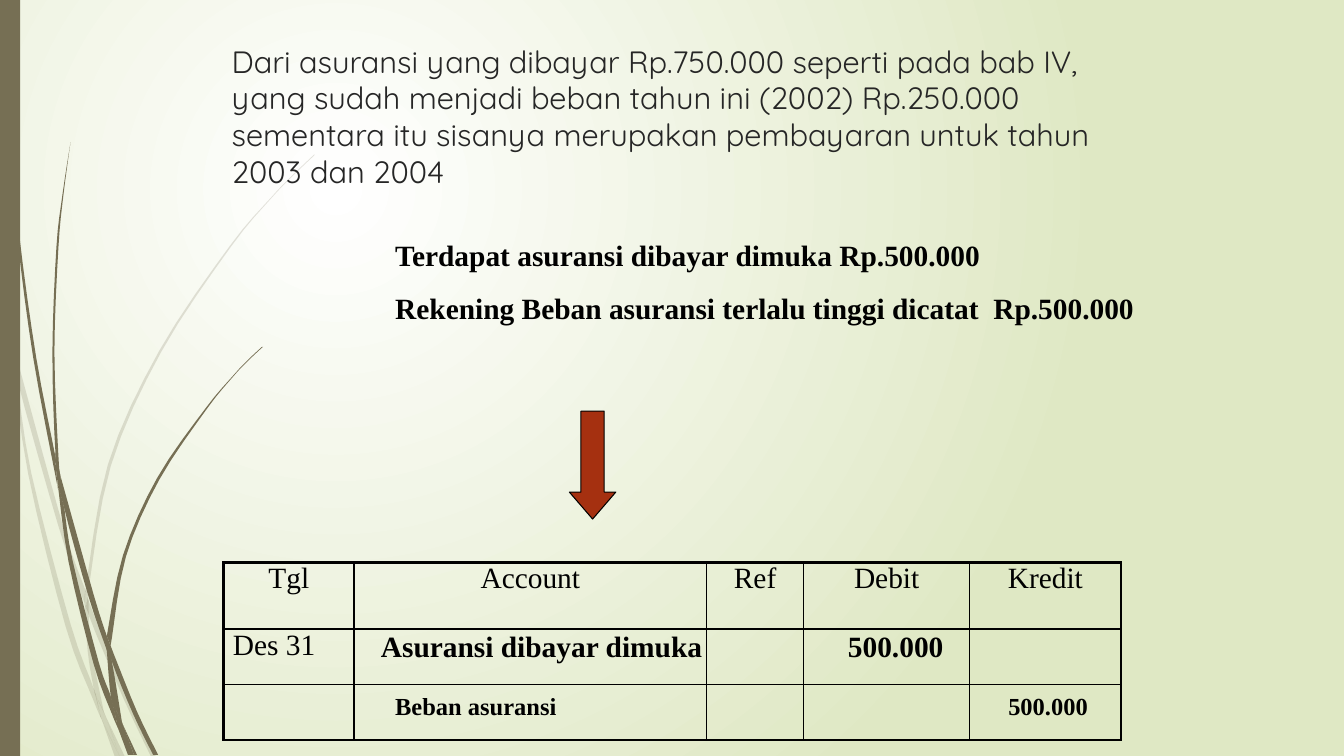
from lxml import etree
from pptx import Presentation
from pptx.dml.color import RGBColor
from pptx.enum.shapes import MSO_SHAPE as Preset
from pptx.enum.text import PP_ALIGN as Align
from pptx.oxml import parse_xml
from pptx.oxml.ns import nsdecls, qn
from pptx.util import Cm, Pt

COLORS = {
    "olive": "766F54",
    "white": "FFFFFF",
    "pale_green": "DFE8C4",
    "title": "262626",
    "black": "000000",
    "red": "A53010",
}
SERIF = "Times New Roman"
GRID = 2.54  # grass points are laid out on a grid of 2.54 cm


def smooth_edge(edge):
    """Run a smooth curve through the points of one edge of a blade."""
    padded = [edge[0], *edge, edge[-1]]
    points = []
    for a, b, c, d in zip(padded, padded[1:], padded[2:], padded[3:]):
        for t in (0, 0.25, 0.5, 0.75):
            points.append([
                Cm(GRID * (2 * q + (r - p) * t + (2 * p - 5 * q + 4 * r - s) * t ** 2
                           + (3 * q - p - 3 * r + s) * t ** 3) / 2)
                for p, q, r, s in zip(a, b, c, d)
            ])
    return points + [[Cm(GRID * value) for value in edge[-1]]]


def add_text(left, top, width, height, text, font_name, size, color, bold=False):
    box = slide.shapes.add_textbox(Cm(left), Cm(top), Cm(width), Cm(height))
    box.text_frame.word_wrap = True
    paragraph = box.text_frame.paragraphs[0]
    paragraph.text = text
    paragraph.font.name = font_name
    paragraph.font.size = Pt(size)
    paragraph.font.bold = bold
    paragraph.font.color.rgb = RGBColor.from_string(COLORS[color])
    return paragraph


presentation = Presentation()
presentation.slide_width, presentation.slide_height = Cm(33.87), Cm(19.05)
slide = presentation.slides.add_slide(presentation.slide_layouts[6])

# Background: a circular glow in the upper left
slide.background.fill.solid()
background = slide.element.find(".//" + qn("p:bgPr"))
background.replace(background[0], parse_xml(
    f'<a:gradFill {nsdecls("a")} rotWithShape="1"><a:gsLst>'
    f'<a:gs pos="0"><a:srgbClr val="{COLORS["white"]}"/></a:gs>'
    f'<a:gs pos="100000"><a:srgbClr val="{COLORS["pale_green"]}"/></a:gs></a:gsLst>'
    '<a:path path="circle"><a:fillToRect l="50000" t="50000" r="100000" b="100000"/>'
    '</a:path></a:gradFill>'))

# Grass: each piece is an edge down one side and an edge back up the other
faint_pieces = [
    ([(0.11, 3.5), (0.09, 3.22), (0, 2.82)], [(0, 2.99), (0.1, 3.44)]),
    ([(0.14, 3.45), (0.17, 3.76), (0.58, 5.22), (0.84, 5.99)],
     [(0.85, 5.86), (0.62, 5.2), (0.14, 3.45)]),
    ([(0.88, 5.96), (0.88, 6.1), (1.23, 6.94), (1.5, 7.51)],
     [(1.55, 7.51), (1.27, 6.92), (0.92, 6.07)]),
    ([(1.05, 7.11), (1.19, 7.51)], [(1.24, 7.51), (1.05, 7.11)]),
    ([(0.11, 3.5), (0.28, 4.7), (0.65, 6.21), (0.92, 6.93), (1.01, 7.14)],
     [(0.99, 7.07), (0.93, 6.83), (0.7, 6.19), (0.31, 4.69), (0.17, 3.76)]),
    ([(0.84, 5.99), (0.87, 6.46), (0.93, 6.83), (0.96, 6.92), (1.05, 7.11)],
     [(1.03, 7.06), (0.91, 6.46), (0.88, 6.1), (0.88, 6.08)]),
    ([(3.12, 1.53), (2.89, 1.75), (2.68, 1.97), (2.28, 2.44), (1.58, 3.48),
      (1.07, 4.61), (0.85, 5.84), (0.85, 5.86)],
     [(0.88, 5.96), (0.88, 5.84), (1.1, 4.62), (1.6, 3.49), (2.29, 2.45),
      (2.68, 1.98), (2.9, 1.75), (3.12, 1.54)]),
    ([(1.01, 7.14), (1.14, 7.51)], [(1.19, 7.51), (1.01, 7.14)]),
    ([(0.85, 5.86), (0.84, 5.99), (0.88, 6.08)], [(0.88, 6.1), (0.88, 5.96)]),
    ([(0.93, 6.83), (0.99, 7.07), (1.01, 7.14), (1.19, 7.51)],
     [(1.19, 7.51), (1.05, 7.11), (0.96, 6.92)]),
]
solid_pieces = [
    ([(0.03, 0), (0.04, 0.48), (0.07, 1.1), (0.17, 2.33), (0.33, 3.55),
      (0.56, 4.77), (0.57, 4.81)],
     [(0.55, 4.57), (0.55, 4.53), (0.36, 3.55), (0.19, 2.32), (0.08, 1.09),
      (0.05, 0.48), (0.04, 0)]),
    ([(0.6, 4.72), (0.64, 5.05), (0.88, 5.92), (1.06, 6.45)],
     [(1.06, 6.31), (0.93, 5.9), (0.6, 4.72)]),
    ([(1.1, 6.41), (1.11, 6.56), (1.32, 7.08), (1.52, 7.49)],
     [(1.57, 7.49), (1.36, 7.06), (1.13, 6.49)]),
    ([(0.57, 4.77), (0.68, 5.57), (0.93, 6.59), (1.11, 7.08), (1.17, 7.22)],
     [(1.16, 7.17), (1.1, 6.91), (0.98, 6.57), (0.72, 5.56), (0.64, 5.05)]),
    ([(0.7, 1.41), (0.62, 1.93), (0.56, 2.45), (0.52, 3.49), (0.55, 4.49), (0.6, 4.72)],
     [(0.6, 4.72), (0.58, 4.53), (0.54, 3.49), (0.58, 2.45), (0.63, 1.93), (0.7, 1.41)]),
    ([(1.22, 7.19), (1.33, 7.49)], [(1.36, 7.49), (1.22, 7.19)]),
    ([(0.55, 4.49), (0.55, 4.53), (0.57, 4.77), (0.64, 5.05)], [(0.6, 4.72), (0.55, 4.49)]),
    ([(2.6, 3.44), (2.45, 3.58), (2.31, 3.73), (2.04, 4.05), (1.56, 4.74),
      (1.22, 5.51), (1.06, 6.31)],
     [(1.1, 6.41), (1.11, 6.33), (1.25, 5.52), (1.58, 4.76), (2.05, 4.06),
      (2.31, 3.74), (2.45, 3.59), (2.61, 3.44)]),
    ([(1.17, 7.22), (1.27, 7.49)], [(1.31, 7.49), (1.17, 7.22)]),
    ([(1.06, 6.45), (1.1, 6.91), (1.16, 7.06), (1.22, 7.19)],
     [(1.21, 7.16), (1.11, 6.56), (1.06, 6.45)]),
    ([(1.06, 6.31), (1.06, 6.45), (1.11, 6.56)], [(1.1, 6.41), (1.06, 6.31)]),
    ([(1.1, 6.91), (1.16, 7.17), (1.17, 7.22), (1.3, 7.49)],
     [(1.33, 7.49), (1.22, 7.19), (1.16, 7.06)]),
]
for pieces, opacity in ((faint_pieces, 20), (solid_pieces, 100)):
    for down, back in pieces:
        outline = smooth_edge(down) + smooth_edge(back)
        builder = slide.shapes.build_freeform(*outline[0])
        builder.add_line_segments(outline[1:], close=True)
        blade = builder.convert_to_shape()
        blade.shadow.inherit = False
        blade.fill.solid()
        blade.fill.fore_color.rgb = RGBColor.from_string(COLORS["olive"])
        blade.line.fill.background()
        if opacity < 100:
            color = blade.element.spPr.find(".//" + qn("a:srgbClr"))
            etree.SubElement(color, qn("a:alpha"), val=str(opacity * 1000))

# Side bar
bar = slide.shapes.add_shape(Preset.RECTANGLE, 0, 0, Cm(0.51), Cm(19.05))
bar.shadow.inherit = False
bar.fill.solid()
bar.fill.fore_color.rgb = RGBColor.from_string(COLORS["olive"])
bar.line.fill.background()

# Title and findings
add_text(5.59, 0.94, 22.63, 3.68,
         "Dari asuransi yang dibayar Rp.750.000 seperti pada bab IV, yang sudah menjadi "
         "beban tahun ini (2002) Rp.250.000 sementara itu sisanya merupakan pembayaran "
         "untuk tahun 2003 dan 2004", "Quicksand", 22, "title")
for top, finding in ((5.84, "Terdapat asuransi dibayar dimuka Rp.500.000"),
                     (7.19, "Rekening Beban asuransi terlalu tinggi dicatat  Rp.500.000")):
    add_text(9.71, top, 19.25, 1.12, finding, SERIF, 21, "black", bold=True)

# Arrow down to the journal
arrow = slide.shapes.add_shape(Preset.DOWN_ARROW, Cm(14.35), Cm(10.36), Cm(1.17), Cm(2.72))
arrow.adjustments[0], arrow.adjustments[1] = 0.5, 0.58
arrow.shadow.inherit = False
arrow.fill.solid()
arrow.fill.fore_color.rgb = RGBColor.from_string(COLORS["red"])
arrow.line.color.rgb = RGBColor.from_string(COLORS["black"])
arrow.line.width = Pt(0.75)

# Journal table
column_widths = [3.28, 8.89, 2.44, 4.19, 3.81]
row_heights = [1.67, 1.4, 1.4]
journal_rows = [["Tgl", "Account", "Ref", "Debit", "Kredit"],
                ["Des 31", "", "", "", ""],
                ["", "", "", "", ""]]
journal = slide.shapes.add_table(3, 5, Cm(5.64), Cm(14.18), Cm(sum(column_widths)),
                                 Cm(sum(row_heights))).table
journal.first_row = journal.horz_banding = False
for column, width in zip(journal.columns, column_widths):
    column.width = Cm(width)
for row, height in zip(journal.rows, row_heights):
    row.height = Cm(height)
for i, texts in enumerate(journal_rows):
    for j, text in enumerate(texts):
        cell = journal.cell(i, j)
        cell.margin_left = cell.margin_right = Cm(0.23)
        cell.margin_top = cell.margin_bottom = 0
        paragraph = cell.text_frame.paragraphs[0]
        paragraph.text = text
        paragraph.alignment = Align.CENTER if i == 0 else Align.LEFT
        paragraph.font.name = SERIF
        paragraph.font.size = Pt(21)
        paragraph.font.color.rgb = RGBColor.from_string(COLORS["black"])
        properties = cell._tc.get_or_add_tcPr()
        for side, outer in (("L", j == 0), ("R", j == 4), ("T", i == 0), ("B", i == 2)):
            properties.append(parse_xml(
                f'<a:ln{side} {nsdecls("a")} w="{Pt(2.25 if outer else 1)}"><a:solidFill>'
                f'<a:srgbClr val="{COLORS["black"]}"/></a:solidFill></a:ln{side}>'))
        cell.fill.background()

# Journal entries, each with its amount at a tab stop
for left, top, width, height, text, size, stop in (
        (9.35, 15.7, 14.82, 1.12, "Asuransi dibayar dimuka\t500.000", 21, 11.77),
        (9.71, 17.3, 18.15, 0.97, "Beban asuransi\t500.000", 17.5, 15.45)):
    entry = add_text(left, top, width, height, text, SERIF, size, "black", bold=True)
    tab_list = parse_xml(f'<a:tabLst {nsdecls("a")}><a:tab pos="{Cm(stop)}" algn="l"/></a:tabLst>')
    entry._p.get_or_add_pPr().insert(0, tab_list)

presentation.save("out.pptx")
